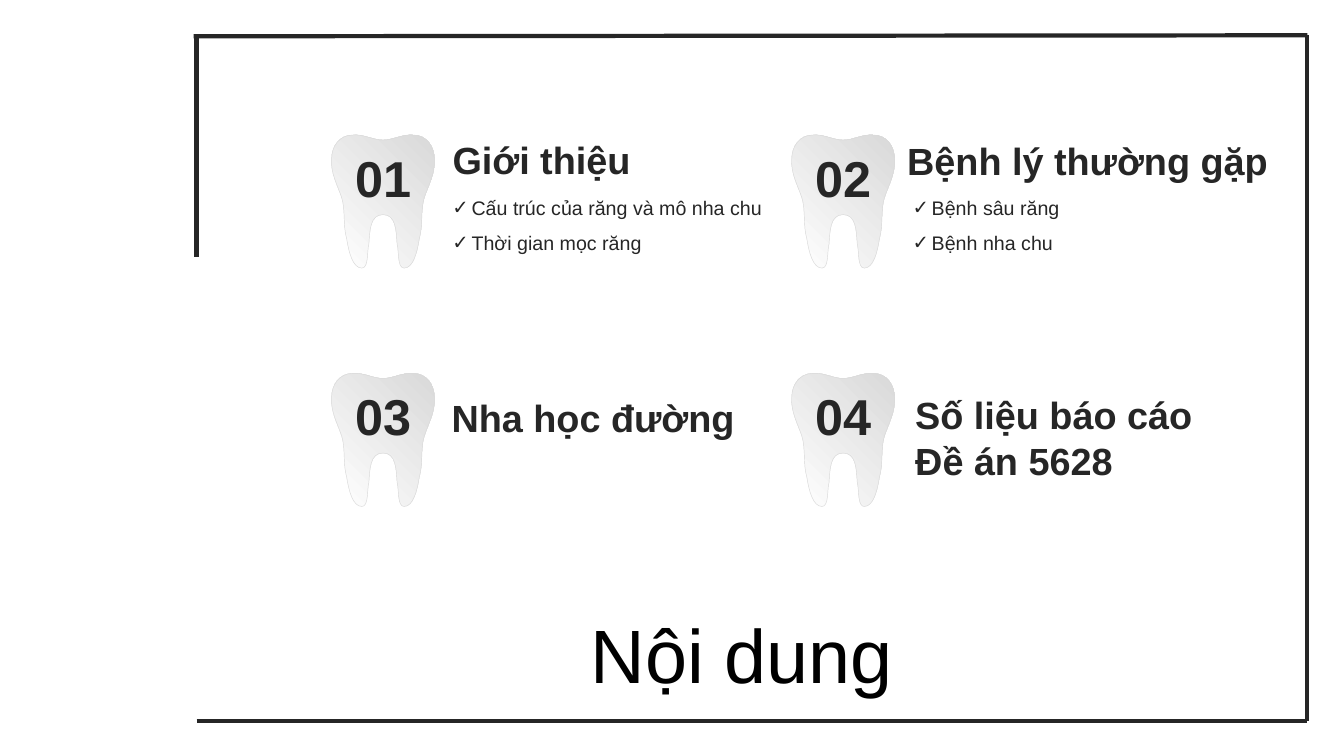
from dataclasses import dataclass

from lxml import etree
from pptx import Presentation
from pptx.dml.color import RGBColor
from pptx.enum.shapes import MSO_CONNECTOR
from pptx.enum.text import MSO_ANCHOR, PP_ALIGN
from pptx.oxml.ns import qn
from pptx.util import Inches, Pt

LINE = MSO_CONNECTOR.STRAIGHT
TOP, MIDDLE = MSO_ANCHOR.TOP, MSO_ANCHOR.MIDDLE
LEFT, CENTER, RIGHT = PP_ALIGN.LEFT, PP_ALIGN.CENTER, PP_ALIGN.RIGHT


@dataclass(frozen=True)
class Theme:
    font: str = "Arial"
    ink: str = "262626"
    black: str = "000000"
    white: str = "FFFFFF"
    gray: str = "D9D9D9"
    title: float = 54
    number: float = 36
    head: float = 27
    item: float = 14
    rule: float = 3
    edge: float = 0.32


THEME = Theme()
UNIT = Inches(0.1)
SIZE = (133.33, 75)
FRAME = (19.5, 3.5, 110.2, 68)
TITLE = (57.3, 59.8, 32.3, 10.1)
GRID = (32.8, 13.4)
STEP = (45.65, 23.65)

SIDE = [
    (0, 0.5),
    (1, 0.5), (1.9, -0.1), (3, 0),
    (4.3, 0), (5.1, 1.1), (5.1, 2.4),
    (5.2, 3.8), (4.5, 5), (4.1, 6.2),
    (3.7, 7.5), (4, 8.9), (3.6, 10.3),
    (3.4, 11.6), (3, 13.2), (2.1, 13.2),
    (1.4, 13.2), (1.6, 11.5), (1.4, 10.8),
    (1.3, 9.5), (1.3, 7.9), (0, 7.9),
]

PARTS = [
    ("Giới thiệu", (10.9, -0.3, 27.6),
     ["Cấu trúc của răng và mô nha chu", "Thời gian mọc răng"]),
    ("Bệnh lý thường gặp", (10.35, -0.2, 38.3), ["Bệnh sâu răng", "Bệnh nha chu"]),
    ("Nha học đường", (10.8, 1.65, 33), []),
    ("Số liệu báo cáo Đề án 5628", (11.15, 1.35, 32.3), []),
]


def emu(box):
    return [round(v * UNIT) for v in box]


def color(code):
    return RGBColor.from_string(code)


def write(slide, box, text, size, shape=None, tint=THEME.ink, bold=False,
          align=LEFT, anchor=TOP, inset=0.12, space=1, mark=None):
    shape = shape or slide.shapes.add_textbox(0, 0, 0, 0)
    shape.left, shape.top, shape.width, shape.height = emu(box)
    frame = shape.text_frame
    frame.word_wrap = True
    frame.vertical_anchor = anchor
    frame.margin_left = frame.margin_right = Inches(inset)
    frame.margin_top = frame.margin_bottom = Inches(0.05)
    frame.text = text
    for para in frame.paragraphs:
        para.alignment = align
        para.line_spacing = space
        font = para.runs[0].font
        font.name, font.size, font.bold = THEME.font, Pt(size), bold
        font.color.rgb = color(tint)
        if mark:
            props = para._p.get_or_add_pPr()
            props.set("marL", str(Inches(0.19)))
            props.set("indent", str(-Inches(0.19)))
            etree.SubElement(props, qn("a:buFont")).set("typeface", THEME.font)
            etree.SubElement(props, qn("a:buChar")).set("char", mark)


def bend(shape):
    legs = list(shape._element.iter(qn("a:lnTo")))
    for first, second, third in zip(legs[::3], legs[1::3], legs[2::3]):
        arc = etree.Element(qn("a:cubicBezTo"))
        first.addprevious(arc)
        for leg in (first, second, third):
            arc.append(leg[0])
            leg.getparent().remove(leg)


def tooth(slide, left, top):
    ring = SIDE + [(-x, y) for x, y in SIDE[-2::-1]]
    dots = [emu((left + 5.2 + x, top + y)) for x, y in ring]
    outline = slide.shapes.build_freeform(*dots[0], scale=1.0)
    outline.add_line_segments(dots[1:], close=True)
    shape = outline.convert_to_shape()
    bend(shape)
    shape.shadow.inherit = False
    shape.fill.gradient()
    shape.fill.gradient_angle = 45
    for stop, code in zip(shape.fill.gradient_stops, (THEME.white, THEME.gray)):
        stop.color.rgb = color(code)
    shape.line.color.rgb = color(THEME.gray)
    shape.line.width = Pt(THEME.edge)


def topic(slide, left, top, number, part):
    head, (dx, dy, width), items = part
    tooth(slide, left, top)
    write(slide, (left, top + 0.7, 10.5, 7.1), f"{number:02}", THEME.number,
          bold=True, align=CENTER)
    write(slide, (left + dx, top + dy, width, 5.6), head, THEME.head, bold=True)
    if items:
        write(slide, (left + 11.1, top + 4.4, 33, 7.6), "\n".join(items),
              THEME.item, inset=0.1, space=1.5, mark="✓")


def border(slide, box):
    left, top, width, height = box
    right, foot = left + width, top + height
    for ends in (
        (left - 0.3, top + 0.1, right, top),
        (left, foot, right, foot),
        (right, top, right, foot),
        (left, top, left, top + 22),
    ):
        line = slide.shapes.add_connector(LINE, *emu(ends))
        line.line.color.rgb = color(THEME.ink)
        line.line.width = Pt(THEME.rule)
        etree.SubElement(line._element.spPr, qn("a:effectLst"))


def main():
    deck = Presentation()
    deck.slide_width, deck.slide_height = emu(SIZE)
    slide = deck.slides.add_slide(deck.slide_layouts[5])
    write(slide, TITLE, "Nội dung", THEME.title, shape=slide.shapes.title,
          tint=THEME.black, align=RIGHT, anchor=MIDDLE, inset=0.1)
    for index, part in enumerate(PARTS):
        row, col = divmod(index, 2)
        topic(slide, GRID[0] + col * STEP[0], GRID[1] + row * STEP[1],
              index + 1, part)
    border(slide, FRAME)
    deck.save("out.pptx")


if __name__ == "__main__":
    main()
